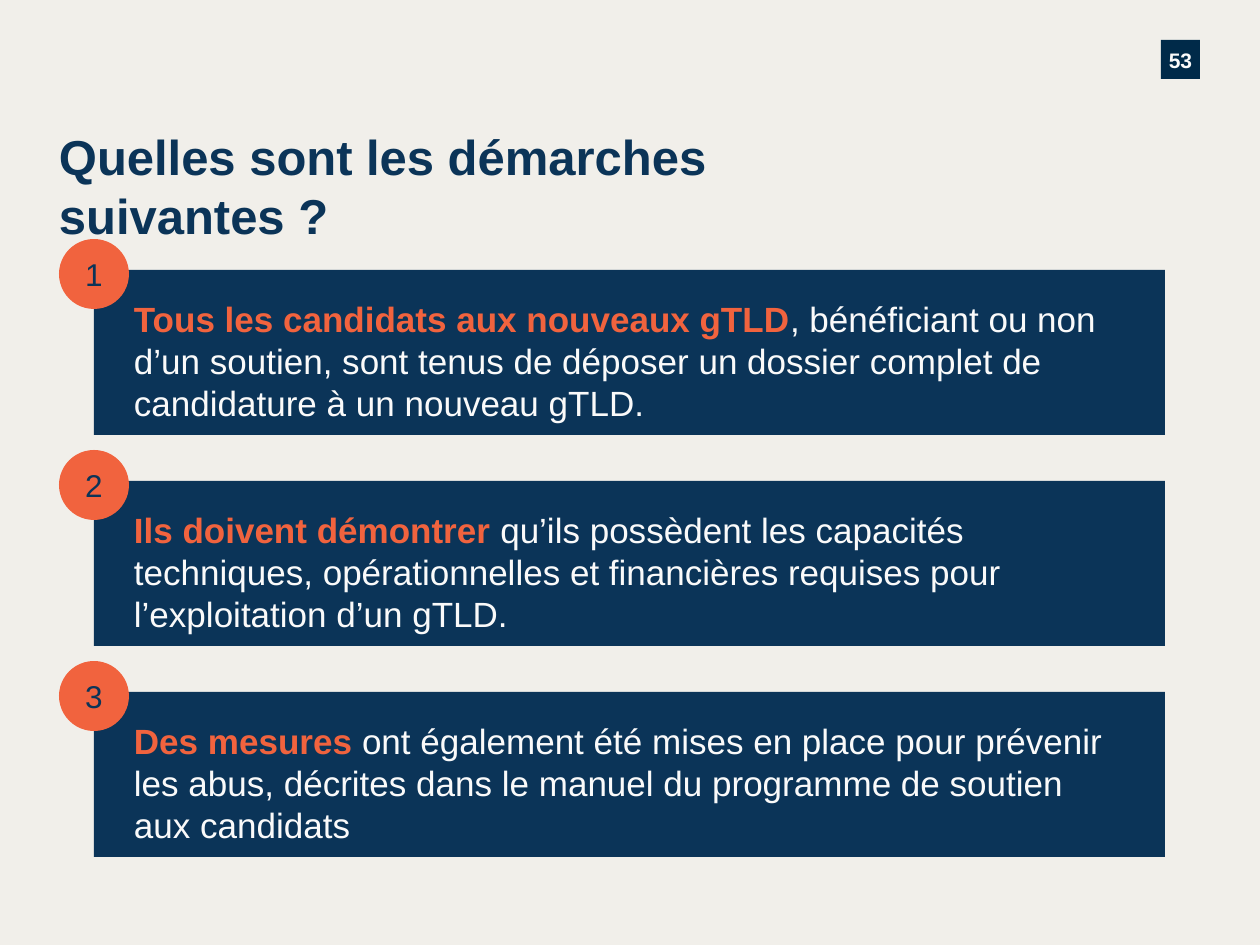
from pptx import Presentation
from pptx import util as u
from pptx.dml.color import RGBColor
from pptx.enum import shapes, text

PX = u.Inches(1) // 126
THEME = {
    "font": "Arial",
    "paper": "F1EFEA", "navy": "0B3458", "badge": "002A49",
    "orange": "F1633E", "white": "FAFAFA",
    "title": 28, "body": 20, "number": 18, "page": 12,
}


def add_block(kind, box, fill, insets):
    block = slide.shapes.add_shape(kind, *(n * PX for n in box))
    block.shadow.inherit = False
    block.line.fill.background()
    if fill:
        block.fill.solid()
        block.fill.fore_color.rgb = RGBColor.from_string(THEME[fill])
    else:
        block.fill.background()
    frame = block.text_frame
    frame.word_wrap = True
    frame.margin_left, frame.margin_top, frame.margin_right, frame.margin_bottom = (
        n * PX for n in insets)
    return frame


def write(frame, parts, size, align, anchor, spacing=1.0):
    frame.vertical_anchor = anchor
    paragraph = frame.paragraphs[0]
    paragraph.alignment = align
    paragraph.line_spacing = spacing
    for words, color, bold in parts:
        run = paragraph.add_run()
        run.text = words
        run.font.name = THEME["font"]
        run.font.size = u.Pt(THEME[size])
        run.font.bold = bold
        run.font.color.rgb = RGBColor.from_string(THEME[color])


RECT, OVAL = shapes.MSO_SHAPE.RECTANGLE, shapes.MSO_SHAPE.OVAL
LEFT, CENTER = text.PP_ALIGN.LEFT, text.PP_ALIGN.CENTER
TOP, MIDDLE = text.MSO_ANCHOR.TOP, text.MSO_ANCHOR.MIDDLE

deck = Presentation()
deck.slide_width, deck.slide_height = 1260 * PX, 945 * PX
slide = deck.slides.add_slide(deck.slide_layouts[6])
slide.background.fill.solid()
slide.background.fill.fore_color.rgb = RGBColor.from_string(THEME["paper"])

page = add_block(RECT, (1161, 40, 39, 39), "badge", (0, 0, 0, 0))
write(page, [("53", "white", True)], "page", CENTER, MIDDLE, 1.08)

title = add_block(RECT, (59, 123, 741, 73), None, (0, 4, 0, 0))
write(title, [("Quelles sont les démarches suivantes ?", "navy", True)],
      "title", LEFT, TOP)

steps = [
    ("Tous les candidats aux nouveaux gTLD",
     ", bénéficiant ou non d’un soutien, sont tenus de déposer un dossier complet "
     "de candidature à un nouveau gTLD."),
    ("Ils doivent démontrer ",
     "qu’ils possèdent les capacités techniques, opérationnelles et financières "
     "requises pour l’exploitation d’un gTLD."),
    ("Des mesures",
     " ont également été mises en place pour prévenir les abus, décrites dans le "
     "manuel du programme de soutien aux candidats"),
]
FIRST_TOP, STEP_PITCH, NUMBER_RISE = 270, 211, 31

for index, (lead, detail) in enumerate(steps):
    top = FIRST_TOP + index * STEP_PITCH
    panel = add_block(RECT, (94, top, 1071, 165), "navy", (40, 28, 44, 10))
    write(panel, [(lead, "orange", True), (detail, "white", False)],
          "body", LEFT, TOP)
    number = add_block(OVAL, (59, top - NUMBER_RISE, 70, 70), "orange", (13, 6, 13, 6))
    write(number, [(str(index + 1), "navy", False)], "number", CENTER, MIDDLE)

deck.save("out.pptx")
